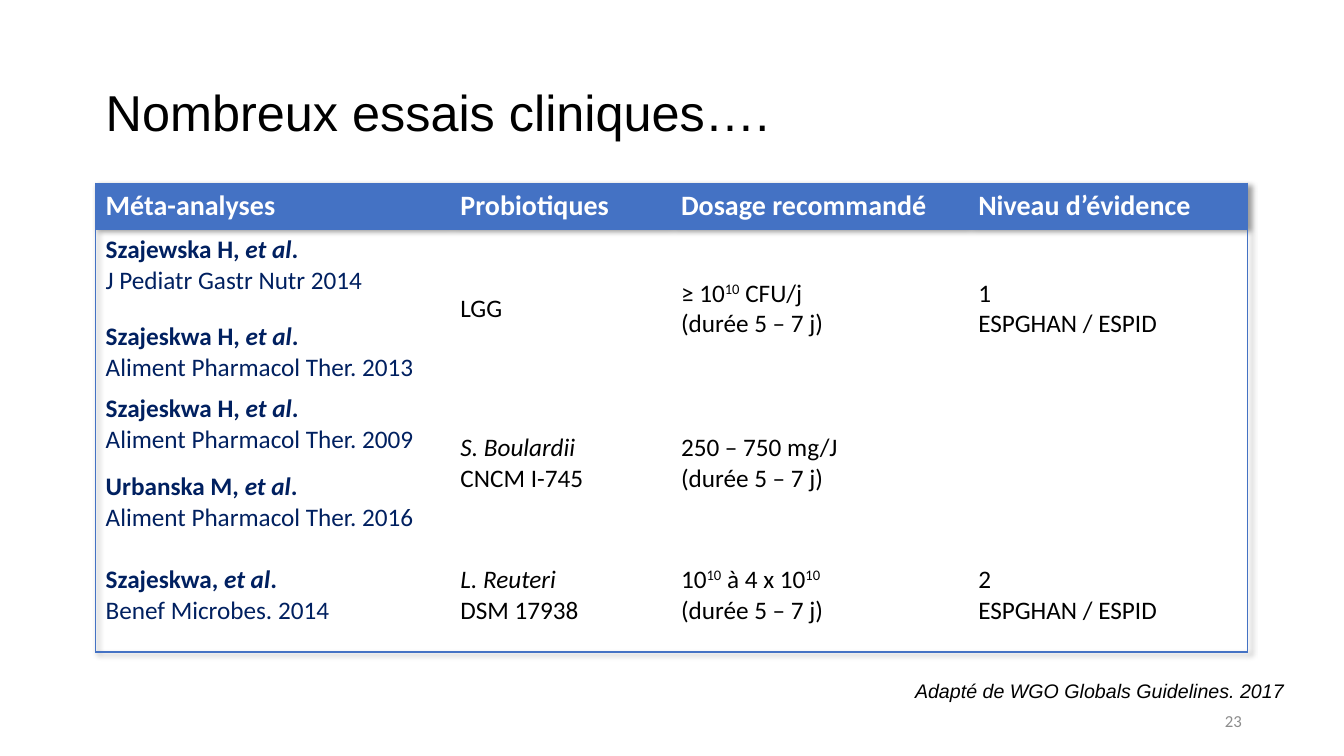
from lxml import etree
from pptx import Presentation
from pptx.dml.color import RGBColor
from pptx.enum.text import MSO_ANCHOR, MSO_AUTO_SIZE, PP_ALIGN
from pptx.oxml.ns import qn
from pptx.util import Cm, Pt

MIDDLE, TOP = MSO_ANCHOR.MIDDLE, MSO_ANCHOR.TOP
LEFT, RIGHT = PP_ALIGN.LEFT, PP_ALIGN.RIGHT
NO_FIT = MSO_AUTO_SIZE.NONE

COLORS = {"blue": "4472C4", "navy": "002060", "black": "000000",
          "white": "FFFFFF", "gray": "8C8C8C"}

TITLE = "Nombreux essais cliniques…."
SOURCE = "Adapté de WGO Globals Guidelines. 2017"
PAGE = "23"
HEADERS = ["Méta-analyses", "Probiotiques", "Dosage recommandé", "Niveau d’évidence"]
DURATION = [("(durée 5 – 7 j)", "")]
SOCIETIES = [("ESPGHAN / ESPID", "")]


def author(name, tail="."):
    return [(name, "b"), ("et al", "bi"), (tail, "b")]


ROWS = [
    [[author("Szajewska H, "), [("J Pediatr Gastr Nutr 2014", "")],
      author("Szajeskwa H, "), [("Aliment Pharmacol Ther. 2013", "")]],
     [[("LGG", "")]],
     [[("≥ 10", ""), ("10", "^"), (" CFU/j", "")], DURATION],
     [[("1", "")], SOCIETIES]],
    [[author("Szajeskwa H, "), [("Aliment Pharmacol Ther. 2009", "")],
      author("Urbanska M, "), [("Aliment Pharmacol Ther. 2016", "")]],
     [[("S. Boulardii", "i"), ("\n", ""), ("CNCM I-745", "")]],
     [[("250 – 750 mg/J", "")], DURATION],
     []],
    [[author("Szajeskwa, "), [("Benef Microbes. 2014", "")]],
     [[("L. Reuteri ", "i"), ("\n", ""), ("DSM 17938", "")]],
     [[("10", ""), ("10", "^"), (" à 4 x 10", ""), ("10", "^")], DURATION],
     [[("2", "")], SOCIETIES]],
]
SPACING = {(0, 1): (0, 6), (0, 2): (12, 0), (1, 2): (12, 0)}

TABLE_LEFT, TABLE_TOP = 2.41, 4.62
COL_WIDTHS = [8.94, 5.56, 7.49, 7.04]
ROW_HEIGHTS = [1.17, 3.99, 3.78, 2.87]
NO_STYLE = "{2D5ABB26-0587-4C30-8999-92F81FD0307C}"


def write(tf, paragraphs, size=18, font="Calibri", color="black", align=LEFT,
          line_spacing=None, spacing=None):
    for i, runs in enumerate(paragraphs):
        p = tf.paragraphs[0] if i == 0 else tf.add_paragraph()
        p.alignment = align
        if line_spacing:
            p.line_spacing = line_spacing
        if spacing and i in spacing:
            before, after = spacing[i]
            p.space_before, p.space_after = Pt(before), Pt(after)
        for text, style in runs:
            if text == "\n":
                p.add_line_break()
                continue
            r = p.add_run()
            r.text = text
            r.font.name, r.font.size = font, Pt(size)
            r.font.bold, r.font.italic = "b" in style, "i" in style
            r.font.color.rgb = RGBColor.from_string(COLORS[color])
            if "^" in style:
                r.font._element.set("baseline", "30000")


def add_color(parent, color):
    fill = etree.SubElement(parent, qn("a:solidFill"))
    return etree.SubElement(fill, qn("a:srgbClr"), val=COLORS[color])


def add_borders(cell, sides):
    tc_pr = cell._tc.get_or_add_tcPr()
    for side in sides:
        add_color(etree.SubElement(tc_pr, qn("a:ln" + side), w="12700"), "blue")


def add_shadow(table):
    effects = etree.Element(qn("a:effectLst"))
    shadow = etree.SubElement(effects, qn("a:outerShdw"), blurRad="50800",
                              dist="38100", dir="2700000", algn="tl")
    black = etree.SubElement(shadow, qn("a:srgbClr"), val=COLORS["black"])
    etree.SubElement(black, qn("a:alpha"), val="40000")
    table._tbl.tblPr.insert(0, effects)


def add_label(s, text, left, top, width, height, wrap, anchor, style="", **fmt):
    sp = s.shapes.add_textbox(Cm(left), Cm(top), Cm(width), Cm(height))
    tf = sp.text_frame
    tf.word_wrap, tf.vertical_anchor = wrap, anchor
    write(tf, [[(text, style)]], **fmt)


def add_trials_table(s):
    frame = s.shapes.add_table(len(ROW_HEIGHTS), len(COL_WIDTHS), Cm(TABLE_LEFT),
                               Cm(TABLE_TOP), Cm(sum(COL_WIDTHS)), Cm(sum(ROW_HEIGHTS)))
    table = frame.table
    table.horz_banding = False
    table._tbl.tblPr.find(qn("a:tableStyleId")).text = NO_STYLE
    add_shadow(table)
    for col, width in zip(table.columns, COL_WIDTHS):
        col.width = Cm(width)
    for row, height in zip(table.rows, ROW_HEIGHTS):
        row.height = Cm(height)
    last_row, last_col = len(ROW_HEIGHTS) - 1, len(COL_WIDTHS) - 1
    header = [[[(text, "b")]] for text in HEADERS]
    for i, row in enumerate([header] + ROWS):
        for j, paragraphs in enumerate(row):
            cell = table.cell(i, j)
            edges = [("L", j == 0), ("R", j == last_col),
                     ("T", i == 0), ("B", i == last_row)]
            add_borders(cell, [side for side, outer in edges if outer])
            if i == 0:
                cell.fill.solid()
                cell.fill.fore_color.rgb = RGBColor.from_string(COLORS["blue"])
                write(cell.text_frame, paragraphs, size=20, color="white")
                continue
            cell.fill.background()
            cell.vertical_anchor = MIDDLE
            spacing = {k: v for (r, k), v in SPACING.items() if r == i - 1 and j == 0}
            write(cell.text_frame, paragraphs, color="black" if j else "navy",
                  spacing=spacing)


def main():
    prs = Presentation()
    prs.slide_width, prs.slide_height = Cm(33.87), Cm(19.05)
    s = prs.slides.add_slide(prs.slide_layouts[5])
    title = s.shapes.title
    title.left, title.top, title.width, title.height = Cm(2.41), Cm(1.57), Cm(18.24), Cm(2.69)
    tf = title.text_frame
    tf.auto_size, tf.vertical_anchor = NO_FIT, MIDDLE
    write(tf, [[(TITLE, "")]], size=36, font="Arial", line_spacing=0.9)
    add_trials_table(s)
    add_label(s, SOURCE, 22.81, 16.99, 9.86, 0.86, False, TOP, style="i",
              size=14, font="Arial")
    add_label(s, PAGE, 23.93, 17.65, 7.62, 1.02, True, MIDDLE,
              size=12, color="gray", align=RIGHT)
    prs.save("out.pptx")


if __name__ == "__main__":
    main()
